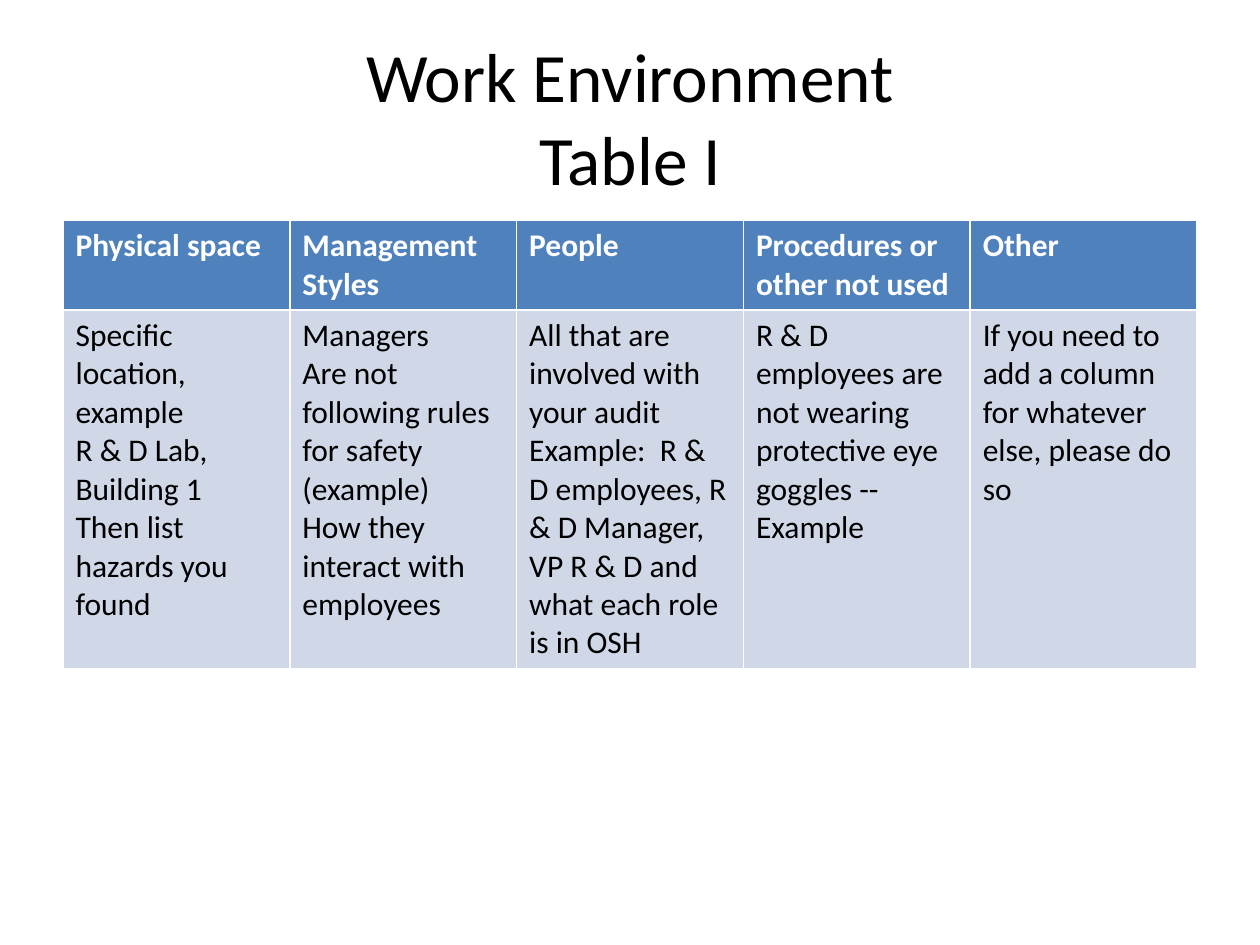
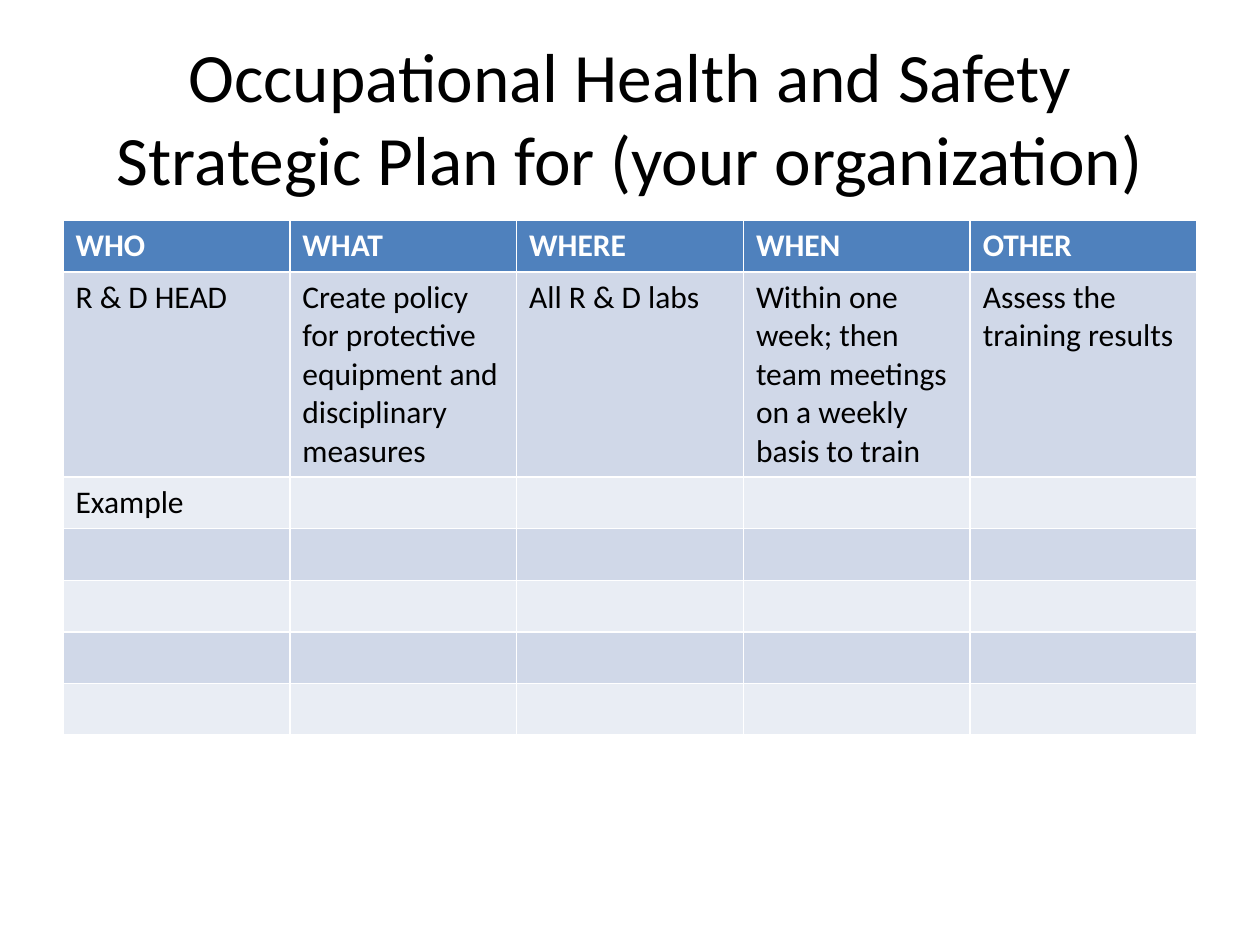
from pptx import Presentation
from pptx.dml.color import RGBColor
from pptx.enum.text import MSO_ANCHOR, MSO_AUTO_SIZE, PP_ALIGN
from pptx.util import Inches, Pt

WIDTH, HEIGHT = Inches(10), Inches(7.5)
FONT = "Calibri"
WHITE, BLACK = "FFFFFF", "000000"
HEADER, BANDS = "4F81BD", ("D0D8E8", "E9EDF4")
TITLE_BOX = (0.05, 0.04, 0.9, 1 / 6)
TABLE_LEFT, TABLE_TOP, TABLE_WIDTH = 0.05, 7 / 30, 0.9
ROW = Inches(0.41)

ENVIRONMENT = [
    ["Physical space", "Management Styles", "People",
     "Procedures or other not used", "Other"],
    ["Specific location, example\nR & D Lab, Building 1\nThen list hazards you found",
     "Managers\nAre not following rules for safety (example)\n"
     "How they interact with employees",
     "All that are involved with your audit Example:  R & D employees, "
     "R & D Manager, VP R & D and what each role is in OSH",
     "R & D employees are not wearing protective eye goggles --Example",
     "If you need to add a column for whatever else, please do so"],
]
PLAN = [
    ["WHO", "WHAT", "WHERE", "WHEN", "OTHER"],
    ["R & D HEAD",
     "Create policy for protective equipment and disciplinary measures",
     "All R & D labs",
     "Within one week; then team meetings on a weekly basis to train",
     "Assess the training results"],
    ["Example"] + [""] * 4,
] + [[""] * 5] * 4

SLIDES = [
    ("Work Environment\vTable I", ENVIRONMENT, [1.7, 6.93]),
    ("Occupational Health and Safety Strategic Plan for (your organization)",
     PLAN, [1, 3.93] + [1] * 5),
]


def rgb(value):
    return RGBColor.from_string(value)


def style_text(tf, size, color, bold=False, align=PP_ALIGN.LEFT):
    for p in tf.paragraphs:
        p.alignment = align
        p.font.name = FONT
        p.font.size = Pt(size)
        p.font.bold = bold
        p.font.color.rgb = rgb(color)


def place_title(s, text, box):
    title = s.shapes.title
    x, y, w, h = box
    title.left, title.top = int(x * WIDTH), int(y * HEIGHT)
    title.width, title.height = int(w * WIDTH), int(h * HEIGHT)
    tf = title.text_frame
    tf.text = text
    tf.word_wrap = True
    tf.auto_size = MSO_AUTO_SIZE.NONE
    tf.vertical_anchor = MSO_ANCHOR.MIDDLE
    style_text(tf, 39.6, BLACK, align=PP_ALIGN.CENTER)


def place_table(s, rows, heights, left, top, width):
    frame = s.shapes.add_table(
        len(rows), len(rows[0]), int(left * WIDTH), int(top * HEIGHT),
        int(width * WIDTH), int(sum(heights) * ROW))
    table = frame.table
    for i, (texts, height) in enumerate(zip(rows, heights)):
        table.rows[i].height = int(height * ROW)
        is_header = i == 0
        for j, text in enumerate(texts):
            cell = table.cell(i, j)
            cell.text = text
            cell.fill.solid()
            cell.fill.fore_color.rgb = rgb(HEADER if is_header else BANDS[(i - 1) % 2])
            style_text(cell.text_frame, 18, WHITE if is_header else BLACK, is_header)


def main():
    prs = Presentation()
    prs.slide_width, prs.slide_height = WIDTH, HEIGHT
    for title, rows, heights in SLIDES:
        s = prs.slides.add_slide(prs.slide_layouts[5])
        place_title(s, title, TITLE_BOX)
        place_table(s, rows, heights, TABLE_LEFT, TABLE_TOP, TABLE_WIDTH)
    prs.save("out.pptx")


if __name__ == "__main__":
    main()
